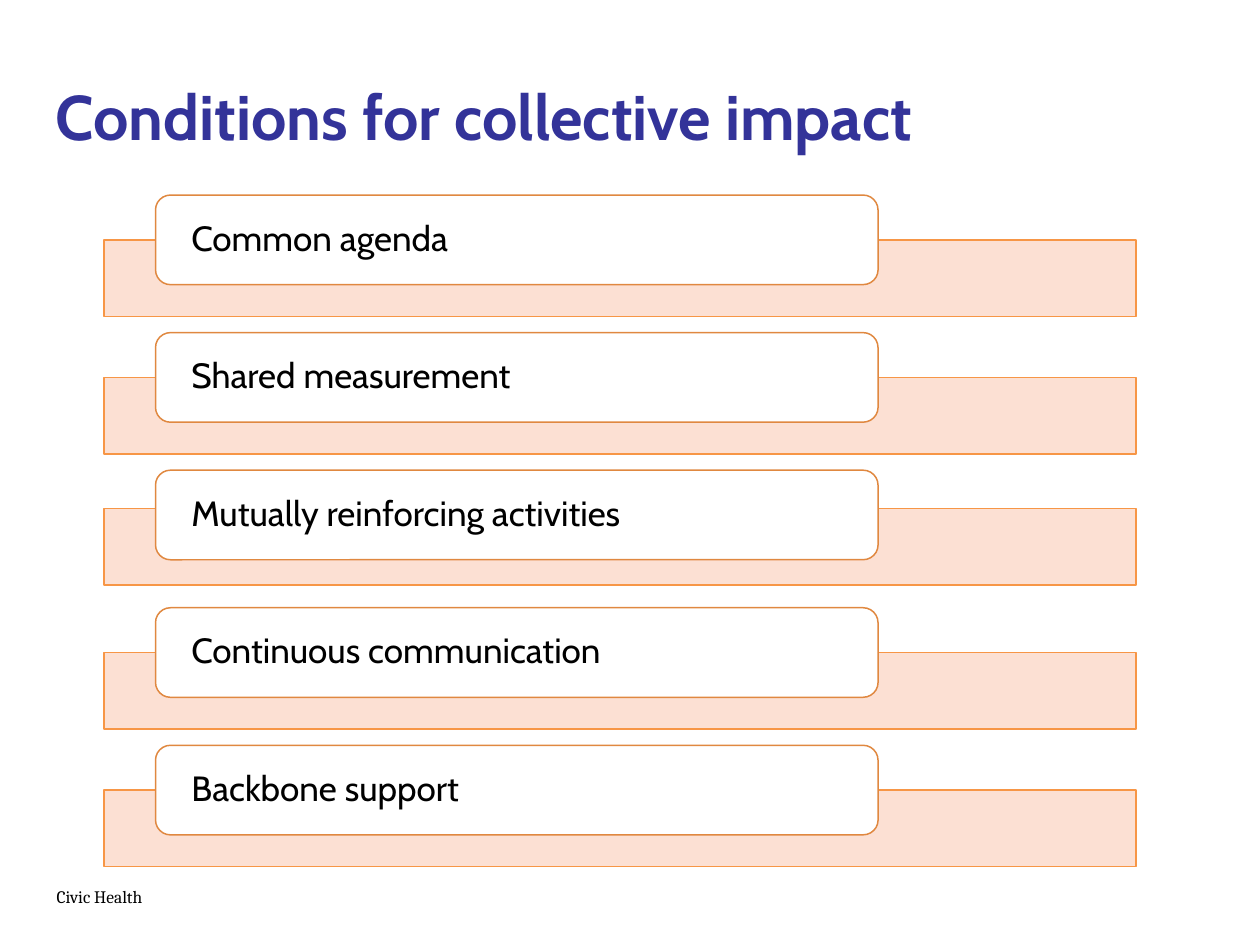
from lxml import etree
from pptx import Presentation
from pptx import util as u
from pptx.dml.color import RGBColor
from pptx.enum import shapes, text
from pptx.oxml.ns import qn

NAVY = RGBColor(0x33, 0x33, 0x99)
BLACK = RGBColor(0, 0, 0)
WHITE = RGBColor(0xFF, 0xFF, 0xFF)
PEACH = RGBColor(0xFC, 0xDD, 0xCF)
ORANGE = RGBColor(0xF7, 0x96, 0x46)
DARK_ORANGE = RGBColor(0xE0, 0x88, 0x40)

CONDITIONS = [
    "Common agenda",
    "Shared measurement",
    "Mutually reinforcing activities",
    "Continuous communication",
    "Backbone support",
]
FIRST_TOP = 111.5
ROW_PITCH = 78.6
BAR_DROPS = [25.7, 25.7, 22, 25.7, 25.7]


def write_text(shape, content, size, font="Cabin", color=BLACK, bold=False,
               insets=(0, 0, 0, 0), wrap=True, spacing=1.0,
               anchor=text.MSO_ANCHOR.MIDDLE):
    """Fill a shape with one left-aligned, formatted paragraph."""
    frame = shape.text_frame
    frame.text = content
    frame.word_wrap = wrap
    frame.auto_size = text.MSO_AUTO_SIZE.NONE
    frame.vertical_anchor = anchor
    frame.margin_left, frame.margin_top, frame.margin_right, frame.margin_bottom = map(u.Pt, insets)
    paragraph = frame.paragraphs[0]
    paragraph.alignment = text.PP_ALIGN.LEFT
    paragraph.line_spacing = spacing
    run_font = paragraph.runs[0].font
    run_font.name = font
    run_font.size = u.Pt(size)
    run_font.bold = bold
    run_font.color.rgb = color


def add_box(slide, kind, box, fill, line, opacity=100):
    """Add a filled and outlined preset shape without a shadow."""
    shape = slide.shapes.add_shape(kind, *map(u.Pt, box))
    shape.shadow.inherit = False
    shape.fill.solid()
    shape.fill.fore_color.rgb = fill
    shape.line.color.rgb = line
    shape.line.width = u.Pt(0.85)
    if opacity < 100:
        color = shape._element.spPr.find(qn("a:solidFill")).find(qn("a:srgbClr"))
        etree.SubElement(color, qn("a:alpha")).set("val", str(opacity * 1000))
    return shape


def add_title(slide, content):
    """Place and format the title placeholder."""
    title = slide.shapes.title
    title.left, title.top, title.width, title.height = map(u.Pt, (20.2, 20.9, 680.4, 90))
    write_text(title, content, 36, color=NAVY, bold=True, insets=(11.5, 3.6, 7.2, 3.6))


def add_condition(slide, content, top, bar_drop):
    """Add a pale bar with a rounded label overlapping it."""
    add_box(slide, shapes.MSO_SHAPE.RECTANGLE, (59.4, top + bar_drop, 589.9, 43.7),
            PEACH, ORANGE, opacity=90)
    label = add_box(slide, shapes.MSO_SHAPE.ROUNDED_RECTANGLE, (88.9, top, 412.9, 51.2),
                    WHITE, DARK_ORANGE)
    write_text(label, content, 20, insets=(18, 0, 18, 0), spacing=0.9)


def add_footer(slide, content):
    """Add the organisation name at the bottom left."""
    footer = slide.shapes.add_textbox(*map(u.Pt, (25.2, 502.6, 68.4, 19.4)))
    write_text(footer, content, 10, font="Cambria", insets=(7.2, 3.6, 7.2, 3.6),
               wrap=False, anchor=text.MSO_ANCHOR.TOP)


def main():
    """Build and save the slide."""
    presentation = Presentation()
    presentation.slide_width, presentation.slide_height = u.Pt(720), u.Pt(540)
    slide = presentation.slides.add_slide(presentation.slide_layouts[5])
    add_footer(slide, "Civic Health")
    add_title(slide, "Conditions for collective impact")
    for row, (condition, bar_drop) in enumerate(zip(CONDITIONS, BAR_DROPS)):
        add_condition(slide, condition, FIRST_TOP + row * ROW_PITCH, bar_drop)
    presentation.save("out.pptx")


if __name__ == "__main__":
    main()
